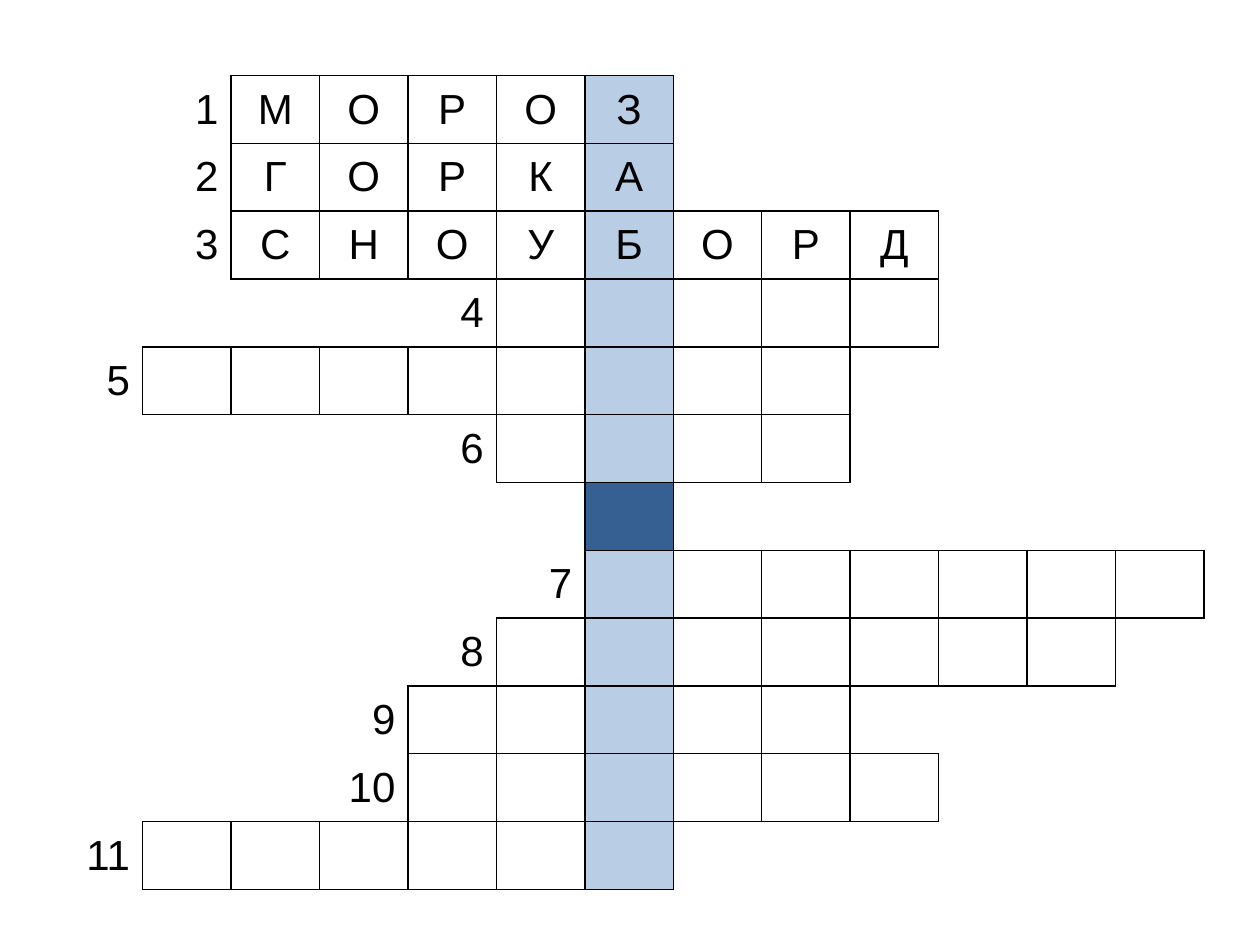
from lxml.etree import SubElement
from pptx import Presentation
from pptx.dml.color import RGBColor
from pptx.enum.text import MSO_ANCHOR, PP_ALIGN
from pptx.oxml.ns import qn
from pptx.util import Inches, Pt

COLORS = {"ink": "000000", "keyword": "B9CDE5", "gap": "376092"}

# number, first column, number of squares, letters already filled in
WORDS = [
    ("1", 2, 5, "МОРОЗ"),
    ("2", 2, 5, "ГОРКА"),
    ("3", 2, 8, "СНОУБОРД"),
    ("4", 5, 5, ""),
    ("5", 1, 8, ""),
    ("6", 5, 4, ""),
    ("", 6, 1, ""),
    ("7", 6, 7, ""),
    ("8", 5, 7, ""),
    ("9", 4, 5, ""),
    ("10", 4, 6, ""),
    ("11", 1, 6, ""),
]
COLUMNS = 13
KEYWORD_COLUMN = 6
LEFT, TOP, WIDTH, HEIGHT = 0.43, 0.6, 9.13, 6.46
SIDES = {"a:lnL": (0, -1), "a:lnR": (0, 1), "a:lnT": (-1, 0), "a:lnB": (1, 0)}


def is_square(row, column):
    """Tell whether a grid position holds a square of the crossword."""
    if not 0 <= row < len(WORDS):
        return False
    _, first, length, _ = WORDS[row]
    return first <= column < first + length


def draw_borders(cell, row, column):
    """Rule every side that touches a square and clear the others."""
    properties = cell._tc.get_or_add_tcPr()
    for tag, (down, across) in SIDES.items():
        border = SubElement(properties, qn(tag), w=str(Pt(1)))
        if is_square(row, column) or is_square(row + down, column + across):
            ink = SubElement(border, qn("a:solidFill"))
            SubElement(ink, qn("a:srgbClr"), val=COLORS["ink"])
        else:
            SubElement(border, qn("a:noFill"))


def fill_cell(cell, row, column):
    if column == KEYWORD_COLUMN:
        cell.fill.solid()
        shade = "keyword" if WORDS[row][0] else "gap"
        cell.fill.fore_color.rgb = RGBColor.from_string(COLORS[shade])
    else:
        cell.fill.background()


def write(cell, text, alignment):
    cell.vertical_anchor = MSO_ANCHOR.MIDDLE
    paragraph = cell.text_frame.paragraphs[0]
    paragraph.text = text
    paragraph.alignment = alignment
    for run in paragraph.runs:
        run.font.name = "Arial"
        run.font.size = Pt(24)
        run.font.color.rgb = RGBColor.from_string(COLORS["ink"])


def main():
    deck = Presentation()
    deck.slide_width, deck.slide_height = Inches(10), Inches(7.5)
    slide = deck.slides.add_slide(deck.slide_layouts[6])
    crossword = slide.shapes.add_table(
        len(WORDS), COLUMNS,
        Inches(LEFT), Inches(TOP), Inches(WIDTH), Inches(HEIGHT),
    ).table
    crossword.first_row = crossword.horz_banding = False

    for row, (number, first, _, letters) in enumerate(WORDS):
        for column in range(COLUMNS):
            cell = crossword.cell(row, column)
            draw_borders(cell, row, column)
            fill_cell(cell, row, column)
        if number:
            write(crossword.cell(row, first - 1), number, PP_ALIGN.RIGHT)
        for column, letter in enumerate(letters, first):
            write(crossword.cell(row, column), letter, PP_ALIGN.CENTER)

    deck.save("out.pptx")


if __name__ == "__main__":
    main()
